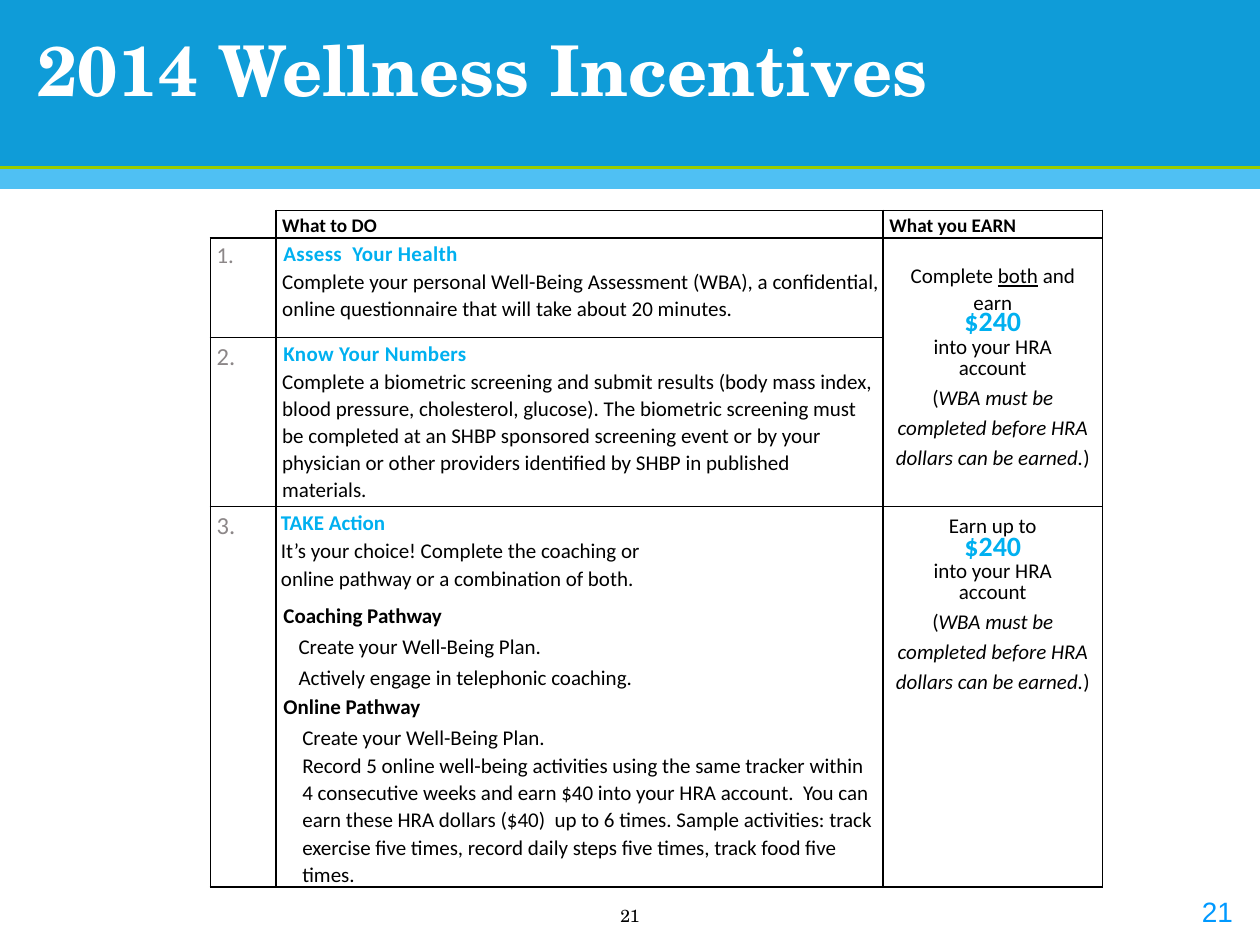
from lxml import etree
from pptx import Presentation
from pptx.dml.color import RGBColor
from pptx.enum.shapes import MSO_CONNECTOR, MSO_SHAPE
from pptx.enum.text import MSO_ANCHOR, MSO_AUTO_SIZE, PP_ALIGN
from pptx.oxml.ns import qn
from pptx.util import Inches, Pt

LEFT, CENTER, JUSTIFY = PP_ALIGN.LEFT, PP_ALIGN.CENTER, PP_ALIGN.JUSTIFY
MIDDLE = MSO_ANCHOR.MIDDLE
SERIF = "TeX Gyre Schola"
CYAN, GRAY = "00B0F0", "8C8788"

HEAD = dict(size=12, bold=True, color=CYAN, spc=0.2, left=0.06, line=1.15)
BODY = dict(size=12, left=0.05, line=1.06, before=0.5)
PATH = dict(size=12, bold=True, left=0.06, line=1.15)
STEP = dict(size=12, left=0.18, line=1.15, before=0.8)
LABEL = dict(size=11, bold=True, left=0.05, line=1.15)
PLAN = "Create your Well-Being Plan."

ASSESS = [
    ("Assess  Your Health", HEAD),
    ("Complete your personal Well-Being Assessment (WBA), a confidential, "
     "online questionnaire that will take about 20 minutes.",
     BODY | dict(align=JUSTIFY, right=0.03)),
]
KNOW = [
    ("Know Your Numbers", HEAD),
    ("Complete a biometric screening and submit results (body mass index, "
     "blood pressure, cholesterol, glucose). The biometric screening must be "
     "completed at an SHBP sponsored screening event or by your physician or "
     "other providers identified by SHBP in published materials.",
     BODY | dict(right=0.07)),
]
ACT = [
    ("TAKE Action", HEAD | dict(left=0.04, spc=0)),
    ("It’s your choice! Complete the coaching or", BODY | dict(left=0.04)),
    ("online pathway or a combination of both.", BODY | dict(left=0.04)),
    ("Coaching Pathway", PATH | dict(before=4.5)),
    (PLAN, STEP),
    ("Actively engage in telephonic coaching.", STEP),
    ("Online Pathway", PATH),
    (PLAN, STEP | dict(left=0.21)),
    ("Record 5 online well-being activities using the same tracker within "
     "4 consecutive weeks and earn $40 into your HRA account.  You can earn "
     "these HRA dollars ($40)  up to 6 times. Sample activities: track "
     "exercise five times, record daily steps five times, track food five "
     "times.", STEP | dict(left=0.21, right=0.04, line=1.06)),
]


def rgb(color):
    return RGBColor.from_string(color)


def write(para, text, size=12, font="Calibri", color="000000", bold=False,
          spc=0, align=LEFT, left=0, right=0, line=None, before=0):
    """Fill a paragraph; text is a string or a list of (text, style) parts."""
    para.alignment = align
    para.space_before = Pt(before)
    if line:
        para.line_spacing = line
    props = para._p.get_or_add_pPr()
    props.set("marL", str(Inches(left)))
    props.set("marR", str(Inches(right)))
    props.set("indent", "0")
    parts = [(text, "")] if isinstance(text, str) else text
    for words, style in parts:
        run = para.add_run()
        run.text = words
        face = run.font
        face.name, face.size, face.bold = font, Pt(size), bold
        face.color.rgb = rgb(color)
        face.italic = style == "i"
        face.underline = style == "u"
        if spc:
            run._r.get_or_add_rPr().set("spc", str(round(spc * 100)))


def earn(intro, gap):
    """Paragraphs for a reward cell; gap is the exact line of the amount."""
    def mid(side, line):
        return dict(align=CENTER, left=side, right=side, line=line)
    return [
        intro,
        ("$240", mid(0.32, Pt(gap)) | dict(size=16, bold=True, color=CYAN)),
        ("into your HRA account", mid(0.18, Pt(11.9))),
        ([("(", ""),
          ("WBA must be completed before HRA dollars can be earned.", "i"),
          (")", "")], mid(0.07, 1.17)),
    ]


def edge(cell, sides):
    """Draw the named sides in black and clear the others."""
    props = cell._tc.get_or_add_tcPr()
    for side in "LRTB":
        line = etree.SubElement(props, qn(f"a:ln{side}"), w=str(Pt(1)))
        if side in sides:
            fill = etree.SubElement(line, qn("a:solidFill"))
            etree.SubElement(fill, qn("a:srgbClr"), val="000000")
        else:
            etree.SubElement(line, qn("a:noFill"))


def fill_cell(cell, paras, top=0, sides="LRTB"):
    cell.margin_left = cell.margin_right = cell.margin_bottom = 0
    cell.margin_top = Inches(top)
    edge(cell, sides)
    cell.fill.background()
    frame = cell.text_frame
    for i, (text, style) in enumerate(paras):
        write(frame.add_paragraph() if i else frame.paragraphs[0],
              text, **style)
    if not paras:
        etree.SubElement(frame.paragraphs[0]._p, qn("a:endParaRPr"), sz="1100")


def add_grid(slide):
    cols, rows = [0.52, 4.82, 1.74], [0.22, 0.79, 1.34, 3.02]
    grid = slide.shapes.add_table(
        len(rows), len(cols), Inches(1.67), Inches(1.67),
        Inches(sum(cols)), Inches(sum(rows))).table
    grid.first_row = grid.horz_banding = False
    for col, width in zip(grid.columns, cols):
        col.width = Inches(width)
    for row, height in zip(grid.rows, rows):
        row.height = Inches(height)
    grid.cell(1, 2).merge(grid.cell(2, 2))

    fill_cell(grid.cell(0, 0), [], sides="RB")
    for col, text in enumerate(["What to DO", "What you EARN"], 1):
        fill_cell(grid.cell(0, col), [(text, LABEL)])
    for row, (size, paras) in enumerate([(13, ASSESS), (14, KNOW), (14, ACT)], 1):
        mark = dict(size=size, color=GRAY, left=0.05, line=1.15)
        fill_cell(grid.cell(row, 0), [(f"{row}.", mark)])
        fill_cell(grid.cell(row, 1), paras)
    both = ([("Complete ", ""), ("both", "u"), (" and earn", "")],
            dict(align=CENTER, left=0.08, right=0.08, line=1.06))
    upto = ("Earn up to",
            dict(align=CENTER, left=0.23, right=0.23, line=Pt(12.1)))
    fill_cell(grid.cell(1, 2), earn(both, 13.3), top=0.19)
    fill_cell(grid.cell(2, 2), [])
    fill_cell(grid.cell(3, 2), earn(upto, 14.2), top=0.09)


def add_band(slide, top, height, color):
    band = slide.shapes.add_shape(MSO_SHAPE.RECTANGLE, 0, Inches(top),
                                  Inches(10), Inches(height))
    band.shadow.inherit = False
    band.fill.solid()
    band.fill.fore_color.rgb = rgb(color)
    band.line.fill.background()


def add_rule(slide, top, color):
    rule = slide.shapes.add_connector(MSO_CONNECTOR.STRAIGHT, 0, Inches(top),
                                      Inches(10), Inches(top))
    rule.line.color.rgb = rgb(color)
    rule.line.width = Pt(1.5)
    etree.SubElement(rule._element.spPr, qn("a:effectLst"))


def add_text(slide, text, box, wrap=True, anchor=MSO_ANCHOR.TOP, **style):
    frame = slide.shapes.add_textbox(*map(Inches, box)).text_frame
    frame.word_wrap = wrap
    frame.vertical_anchor = anchor
    write(frame.paragraphs[0], text, **style)


def set_title(slide, text):
    title = slide.shapes.title
    title.left = title.top = 0
    title.width, title.height = Inches(10), Inches(1.08)
    frame = title.text_frame
    frame.auto_size = MSO_AUTO_SIZE.NONE
    frame.word_wrap = True
    frame.vertical_anchor = MIDDLE
    frame.margin_left = Inches(0.3)
    write(frame.paragraphs[0], text, size=40, font=SERIF, color="FFFFFF",
          bold=True)
    # Bring the title in front of the bands.
    slide.shapes._spTree.append(title._element)


def main():
    deck = Presentation()
    deck.slide_width, deck.slide_height = Inches(10), Inches(7.5)
    slide = deck.slides.add_slide(deck.slide_layouts[5])
    add_band(slide, 0, 1.33, "0F9CD8")
    add_band(slide, 1.33, 0.17, "4FC0F3")
    add_rule(slide, 1.33, "99CC00")
    set_title(slide, "2014 Wellness Incentives")
    add_text(slide, "21", (9.44, 7.05, 0.47, 0.37), wrap=False, size=16,
             font="Arial", color="0099FF")
    add_text(slide, "21", (4.57, 7.07, 0.86, 0.39), anchor=MIDDLE, size=10,
             font=SERIF, align=CENTER)
    add_grid(slide)
    deck.save("out.pptx")


if __name__ == "__main__":
    main()
